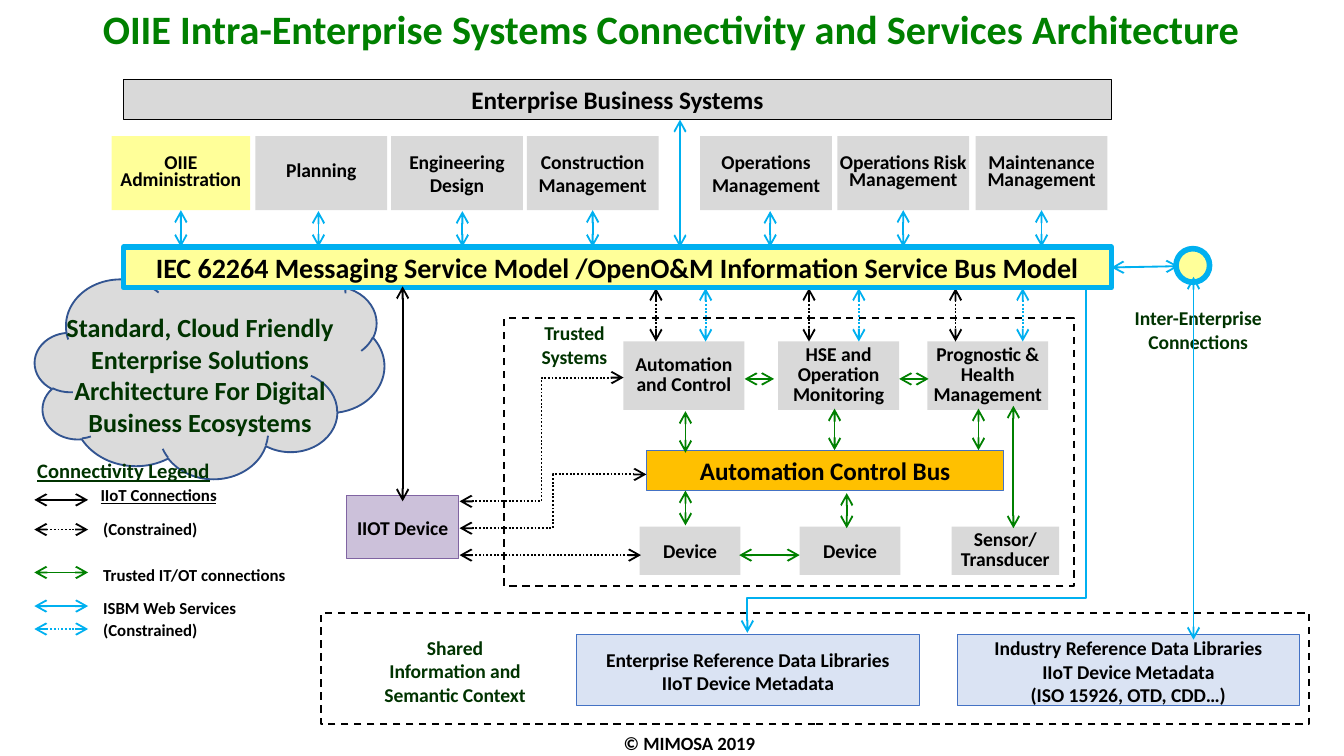
from lxml.etree import SubElement
from pptx import Presentation
from pptx.dml.color import RGBColor as RGB
from pptx.enum.dml import MSO_LINE as DASH
from pptx.enum.shapes import MSO_CONNECTOR as CXN, MSO_SHAPE as SHP
from pptx.enum.text import MSO_ANCHOR as ANCHOR, PP_ALIGN as ALIGN
from pptx.oxml.ns import qn
from pptx.util import Pt

C = {"black": "000000", "white": "FFFFFF", "green": "008000", "dark": "003300",
     "sky": "00B0F0", "grey": "D9D9D9", "cloud": "DBDBDB", "cloud_line": "325491",
     "yellow": "FFFF99", "amber": "FFC000", "blue": "4472C4", "pale": "DAE3F3",
     "lilac": "CCC1DA", "purple": "8064A2"}
DOT = DASH.ROUND_DOT
TIGHT = {"margin_left": 0, "margin_right": 0}


def write(sp, text, size=10.5, color="black", align=ALIGN.CENTER, spacing=None,
          underline=None, **frame):
    """Fill a shape with bold text, one paragraph per line."""
    tf = sp.text_frame
    values = {"word_wrap": True, "margin_left": 7.2, "margin_right": 7.2,
              "margin_top": 3.6, "margin_bottom": 3.6, **frame}
    for k, v in values.items():
        setattr(tf, k, Pt(v) if k.startswith("margin") else v)
    for i, line in enumerate(text.split("\n")):
        p = tf.add_paragraph() if i else tf.paragraphs[0]
        p.alignment, p.line_spacing = align, spacing
        r = p.add_run()
        r.text = line
        font = {"name": "Calibri", "size": Pt(size), "bold": True, "underline": underline}
        for k, v in font.items():
            setattr(r.font, k, v)
        r.font.color.rgb = RGB.from_string(C[color])


def label(s, x, y, w, h, text, **fmt):
    """Add a text box."""
    write(s.shapes.add_textbox(Pt(x), Pt(y), Pt(w), Pt(h)), text, **fmt)


def box(s, x, y, w, h, text="", fill="grey", line=None, width=0.5, dash=None,
        kind=SHP.RECTANGLE, **fmt):
    """Add a filled shape with optional outline and text."""
    sp = s.shapes.add_shape(kind, Pt(x), Pt(y), Pt(w), Pt(h))
    sp.shadow.inherit = False
    sp.fill.solid()
    sp.fill.fore_color.rgb = RGB.from_string(C[fill])
    if line:
        sp.line.color.rgb = RGB.from_string(C[line])
        sp.line.width = Pt(width)
        if dash:
            sp.line.dash_style = dash
    else:
        sp.line.fill.background()
    if text:
        write(sp, text, **{"vertical_anchor": ANCHOR.MIDDLE, **fmt})
    return sp


def link(s, x1, y1, x2, y2, color, dash=None, kind=CXN.STRAIGHT,
         ends=("headEnd", "tailEnd"), begin=None):
    """Add an arrow, joined at its start to a (shape, side) pair if given."""
    c = s.shapes.add_connector(kind, Pt(x1), Pt(y1), Pt(x2), Pt(y2))
    if begin:
        c.begin_connect(*begin)
    c.line.color.rgb = RGB.from_string(C[color])
    c.line.width = Pt(1)
    if dash:
        c.line.dash_style = dash
    ln = c.line._get_or_add_ln()
    for end in ends:
        SubElement(ln, qn(f"a:{end}")).set("type", "arrow")
    SubElement(c._element.spPr, qn("a:effectLst"))
    return c


def cloud(s, x, y, w, h):
    """Draw the cloud and its message."""
    box(s, x, y, w, h, fill="cloud", line="cloud_line", width=1, kind=SHP.CLOUD)
    label(s, x - 6.5, y + 24.5, w + 2.9, 74.9,
          "Standard, Cloud Friendly Enterprise Solutions Architecture For Digital "
          "Business Ecosystems", size=14, color="dark")


def shared_context(s, x, y, w, h):
    """Draw the shared context zone with its two data libraries."""
    box(s, x, y, w, h, fill="white", line="black", width=1, dash=DASH.DASH)
    label(s, x + 23.8, y + 8.7, 95.8, 45.4,
          "Shared Information and Semantic Context", color="dark")
    libraries = [
        (136.8, "Enterprise Reference Data Libraries\nIIoT Device Metadata"),
        (340.6, "Industry Reference Data Libraries\nIIoT Device Metadata\n(ISO 15926, OTD, CDD…)")]
    for dx, text in libraries:
        box(s, x + dx, y + 11.5, 183.6, 38.2, text, fill="pale", line="blue", margin_top=5)


def trusted_systems(s, x, y, w, h):
    """Draw the trusted zone: control systems, control bus and devices."""
    box(s, x, y, w, h, fill="white", line="black", width=1, dash=DASH.DASH)
    label(s, x + 12.2, y - 2.1, 51.1, 32.4, "Trusted\nSystems", color="dark", word_wrap=False)
    controls = [(64, 81.4, 108, "Automation and Control"),
                (146.9, 163.4, 190.1, "HSE and Operation Monitoring"),
                (226.8, 241.9, 277.9, "Prognostic & Health Management")]
    for dx, black_x, sky_x, text in controls:
        box(s, x + dx, y + 12.3, 64.8, 36.7, text, spacing=Pt(10.5), **TIGHT)
        for ax, color in ((black_x, "black"), (sky_x, "sky")):
            link(s, x + ax, y - 16.2, x + ax, y + 12.4, color, DOT)
    box(s, x + 76.3, y + 70.6, 191.5, 21.6, "Automation Control Bus",
        fill="amber", line="blue", size=13.5)
    devices = [(72.7, 54, "Device", None), (158.4, 54, "Device", None),
               (239.8, 57.6, "Sensor/ Transducer", Pt(10.5))]
    for dx, dw, text, spacing in devices:
        box(s, x + dx, y + 111.6, dw, 25.9, text, spacing=spacing, **TIGHT)
    for x1, y1, x2, y2 in [
            (128.9, 32.4, 144.7, 32.4), (211.7, 32.4, 227.5, 32.4),
            (97.2, 72, 97.2, 49.7), (177.1, 70.6, 177.1, 48.3),
            (254.2, 70.6, 254.2, 48.3), (272.9, 112.4, 272.9, 46.8),
            (97.2, 92.2, 97.2, 110.9), (183.6, 93.6, 183.6, 112.4),
            (126, 126.8, 158.4, 126.8)]:
        link(s, x + x1, y + y1, x + x2, y + y2, "green")


def enterprise(s, x, y, w, h):
    """Draw business systems and applications above the service bus; return the bus."""
    box(s, x, y, w, 21.6, "Enterprise Business Systems", line="black", size=13.5)
    bus = box(s, x, y + h - 21.6, w, 21.6,
              "IEC 62264 Messaging Service Model /OpenO&M Information Service Bus Model",
              fill="yellow", line="sky", width=3, size=15)
    apps = [("OIIE Administration", -6.4, 30.3, True, Pt(9)),
            ("Planning", 70.6, 104.4, False, Pt(9)),
            ("Engineering Design", 143.3, 181.5, False, None),
            ("Construction Management", 216, 250.6, True, None),
            ("Operations Management", 308.9, 346.4, False, None),
            ("Operations Risk Management", 382.4, 417.6, True, Pt(9)),
            ("Maintenance Management", 456.5, 492.5, True, Pt(9))]
    for text, dx, ax, joined, spacing in apps:
        admin = text.startswith("OIIE")
        app = box(s, x + dx, y + 30.5, 74.2 if admin else 70.6, 39.6, text,
                  fill="yellow" if admin else "grey", spacing=spacing, **TIGHT)
        if joined:
            ax = dx + app.width.pt / 2
        link(s, x + ax, y + 70.6, x + ax, y + 89.8, "sky",
             begin=(app, 2) if joined else None)
    link(s, x + 298.1, y + 21.6, x + 298.1, y + 90, "sky")
    return bus


def iiot_device(s, x, y, w, h):
    """Draw the IIoT device and its connections."""
    box(s, x, y, w, h, "IIOT Device", fill="lilac", line="purple", **TIGHT)
    link(s, x + w / 2, y - 112.3, x + w / 2, y + 2.9, "black")
    right = x + w + 0.6
    link(s, x + 157.6, y + 31.7, right, y + 31.7, "black", DOT)
    for y1, dx, y2 in ((17.3, 160.5, -11.5), (2.9, 148.3, -63.4)):
        link(s, right, y + y1, x + dx, y + y2, "black", DOT, CXN.ELBOW)


def legend(s, x, y, w, h):
    """Draw the connectivity legend."""
    label(s, x, y, w, 20.9, "Connectivity Legend", size=11, color="dark", underline=True)
    rows = [("IIoT Connections", 34.6, 14.4, 25.9, "black", None, True),
            ("(Constrained)", 36, 32.4, 41.8, "black", DOT, None),
            ("Trusted IT/OT connections", 36, 56.9, 64.8, "green", None, None),
            ("ISBM Web Services", 36, 74.9, 82.8, "sky", None, None),
            ("(Constrained)", 36, 86.4, 95.1, "sky", DOT, None)]
    for text, dx, text_y, line_y, color, dash, underline in rows:
        label(s, x + dx, y + text_y, 115.2, 18, text, size=9, align=ALIGN.LEFT,
              underline=underline)
        link(s, x + 6.2, y + line_y, x + 35, y + line_y, color, dash)


def inter_enterprise(s, x, y, w, h, bus):
    """Draw the external node and the links from the bus to the data libraries."""
    box(s, x + 36, y, 18, 18, fill="yellow", line="sky", width=3, kind=SHP.OVAL)
    label(s, x, y + 27.4, w, 32.4, "Inter-Enterprise Connections", color="dark")
    link(s, x + 45.4, y + 15.1, x + 45.4, y + h, "sky")
    link(s, x + 1.4, y + 9.4, x + 37.4, y + 9.4, "sky", begin=(bus, 3))
    c = link(s, x - 195.1, y + 23, x - 10.8, y + 204.4, "sky", kind=CXN.ELBOW,
             ends=("tailEnd",))
    c._element.spPr.find(qn("a:xfrm")).set("rot", "5400000")
    geom = c._element.spPr.find(qn("a:prstGeom"))
    guide = SubElement(geom.find(qn("a:avLst")), qn("a:gd"))
    guide.set("name", "adj1")
    guide.set("fmla", "val 89800")


def main():
    """Build the architecture slide."""
    prs = Presentation()
    prs.slide_width, prs.slide_height = Pt(720), Pt(405)
    s = prs.slides.add_slide(prs.slide_layouts[6])
    label(s, 300.2, 388.8, 138.2, 19.4, "© MIMOSA 2019", size=10)
    label(s, 16.6, 1.4, 686.2, 42.5,
          "OIIE Intra-Enterprise Systems Connectivity and Services Architecture",
          size=21.6, color="green", spacing=0.9)
    cloud(s, 18.7, 139, 187.2, 117.4)
    shared_context(s, 172.1, 328.3, 529.2, 59.8)
    trusted_systems(s, 270, 170.6, 305.3, 143.3)
    bus = enterprise(s, 66.2, 42.5, 529.2, 111.6)
    iiot_device(s, 185.8, 265.7, 59.8, 33.8)
    legend(s, 12.2, 241.9, 108, 104.4)
    inter_enterprise(s, 594, 133.2, 95.8, 209.5, bus)
    prs.save("out.pptx")


if __name__ == "__main__":
    main()
